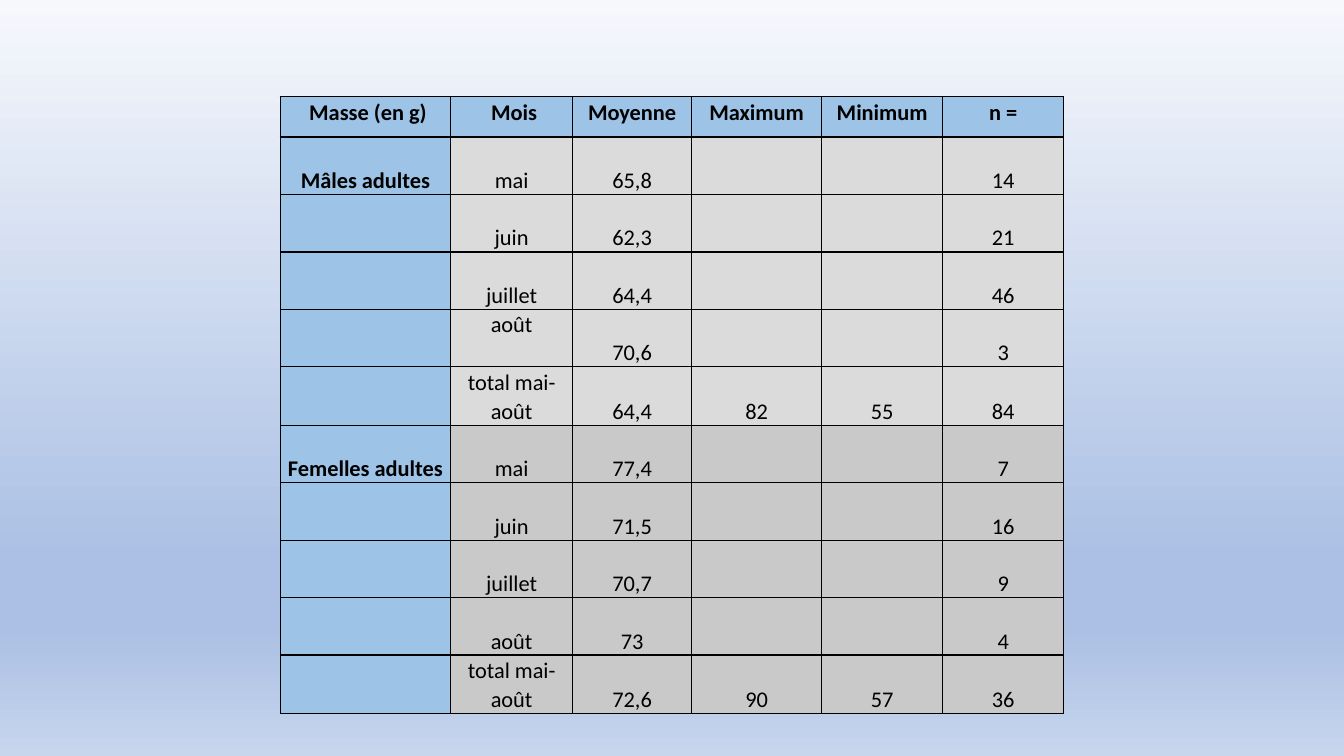
from lxml import etree
from pptx import Presentation
from pptx.dml.color import RGBColor
from pptx.enum.text import MSO_ANCHOR, PP_ALIGN
from pptx.oxml.ns import qn
from pptx.util import Inches, Pt

TOP, BOTTOM, CENTER = MSO_ANCHOR.TOP, MSO_ANCHOR.BOTTOM, PP_ALIGN.CENTER

HEADERS = [" Masse (en g)", " Mois", "Moyenne", "Maximum", "Minimum", "n ="]
GROUPS = [
    ("Mâles adultes", "DBDBDB", [
        ("mai", "65,8", "", "", "14"),
        ("juin", "62,3", "", "", "21"),
        ("juillet", "64,4", "", "", "46"),
        ("août", "70,6", "", "", "3"),
        ("total mai-août", "64,4", "82", "55", "84"),
    ]),
    ("Femelles adultes", "C9C9C9", [
        ("mai", "77,4", "", "", "7"),
        ("juin", "71,5", "", "", "16"),
        ("juillet", "70,7", "", "", "9"),
        ("août", "73", "", "", "4"),
        ("total mai- août", "72,6", "90", "57", "36"),
    ]),
]
BLUE, BLACK = "9DC3E6", "000000"
BACKDROP = [(0, "F6F8FC"), (74, "ABC0E4"), (83, "ABC0E4"), (100, "C7D5ED")]
LEFT, ABOVE = 2.78, 0.96
WIDTHS = [1.69, 1.21, 1.18, 1.29, 1.2, 1.2]
HEADER_HEIGHT, ROW_HEIGHT = 0.4, 0.57


def color(code):
    return RGBColor.from_string(code)


def add_xml_color(parent, code):
    etree.SubElement(parent, qn("a:srgbClr"), val=code)


def paint_background(page):
    fill = page.background.fill
    fill.gradient()
    fill.gradient_angle = 270
    stops = page.element.find(".//" + qn("a:gsLst"))
    for stop in list(stops):
        stops.remove(stop)
    for percent, code in BACKDROP:
        stop = etree.SubElement(stops, qn("a:gs"), pos=str(percent * 1000))
        add_xml_color(stop, code)


def add_borders(cell):
    properties = cell._tc.get_or_add_tcPr()
    for place, side in enumerate(("lnL", "lnR", "lnT", "lnB")):
        line = etree.Element(qn("a:" + side), w=str(Pt(1)))
        add_xml_color(etree.SubElement(line, qn("a:solidFill")), BLACK)
        properties.insert(place, line)


def fill_cell(cell, text, background, bold, anchor):
    cell.margin_left = cell.margin_right = Inches(0.07)
    cell.margin_top = cell.margin_bottom = 0
    cell.vertical_anchor = anchor
    cell.fill.solid()
    cell.fill.fore_color.rgb = color(background)
    add_borders(cell)
    if text:
        para = cell.text_frame.paragraphs[0]
        para.alignment = CENTER
        para.line_spacing = 1.07
        span = para.add_run()
        span.text = text
        span.font.name = "Calibri"
        span.font.size = Pt(16)
        span.font.bold = bold
        span.font.color.rgb = color(BLACK)


def add_mass_table(page):
    rows = [(HEADERS, BLUE)]
    for name, shade, months in GROUPS:
        for index, values in enumerate(months):
            rows.append(((name if index == 0 else "", *values), shade))
    heights = [HEADER_HEIGHT] + [ROW_HEIGHT] * (len(rows) - 1)
    frame = page.shapes.add_table(
        len(rows), len(WIDTHS), Inches(LEFT), Inches(ABOVE),
        Inches(sum(WIDTHS)), Inches(sum(heights)))
    table = frame.table
    table.first_row = table.horz_banding = False
    for column, width in zip(table.columns, WIDTHS):
        column.width = Inches(width)
    for r, (texts, shade) in enumerate(rows):
        table.rows[r].height = Inches(heights[r])
        for c, text in enumerate(texts):
            at_top = r == 0 or (r, c) == (4, 1)
            fill_cell(table.cell(r, c), text, BLUE if c == 0 else shade,
                      r == 0 or c == 0, TOP if at_top else BOTTOM)


def main():
    deck = Presentation()
    deck.slide_width, deck.slide_height = Inches(13.33), Inches(7.5)
    page = deck.slides.add_slide(deck.slide_layouts[6])
    paint_background(page)
    add_mass_table(page)
    deck.save("out.pptx")


if __name__ == "__main__":
    main()
